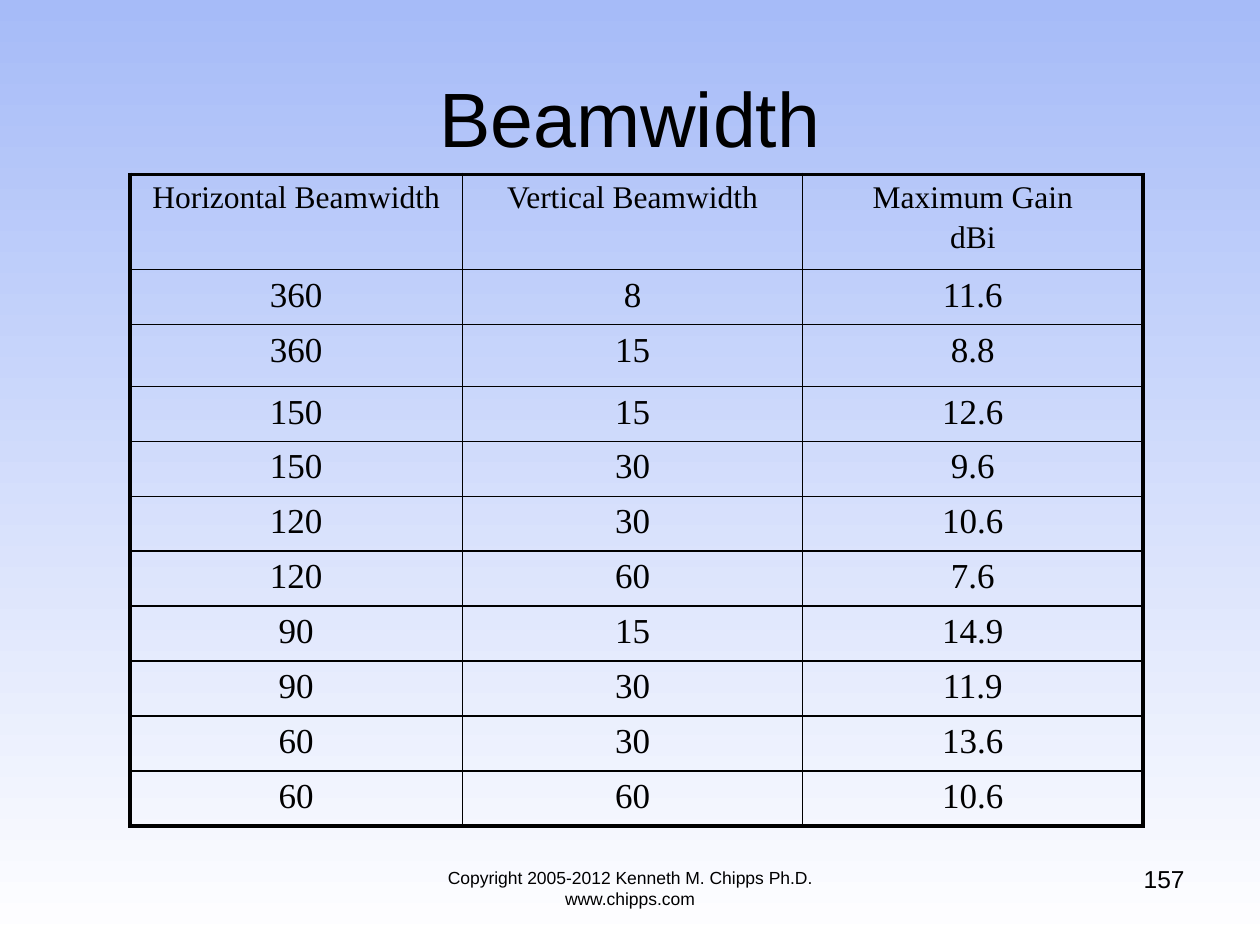
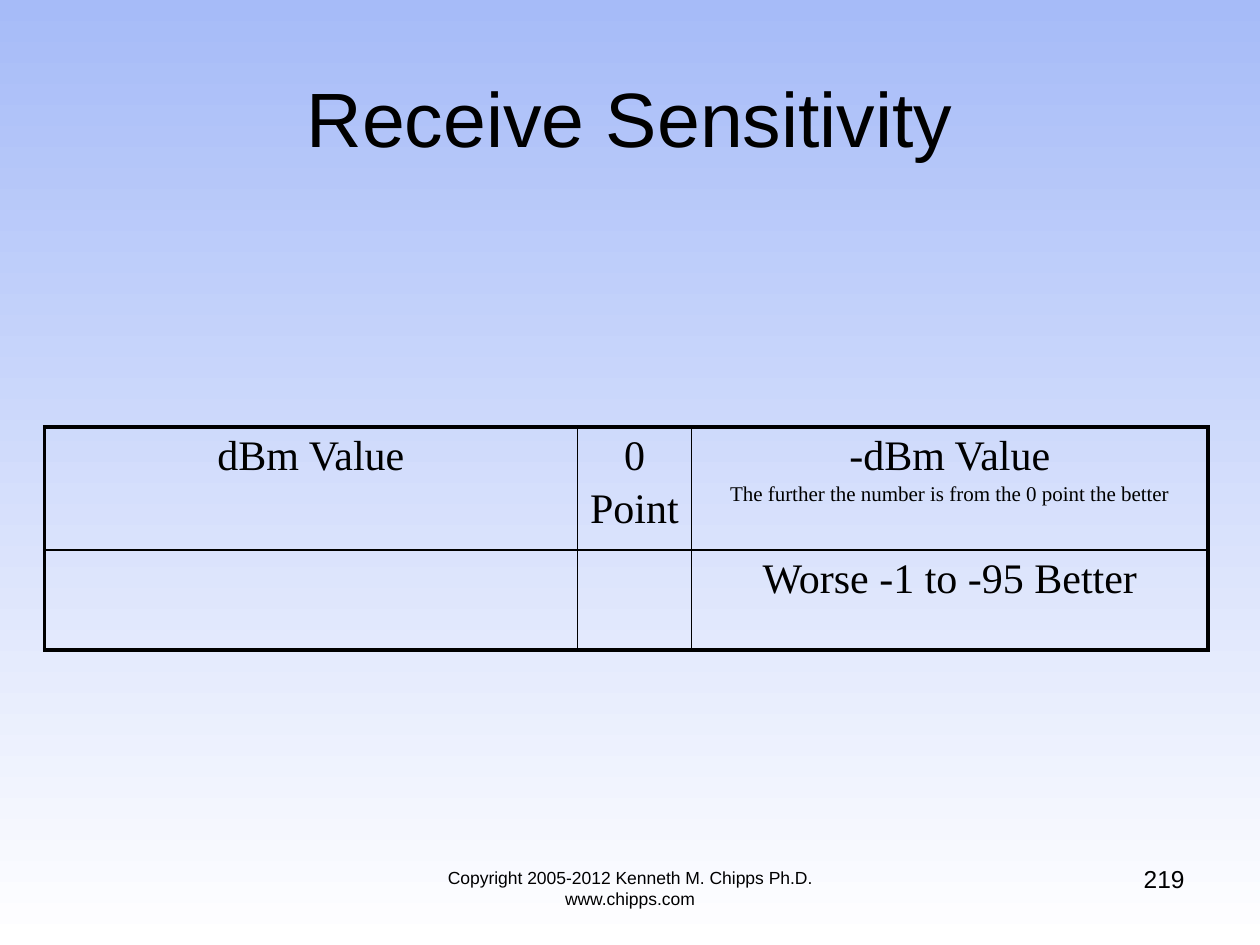
from dataclasses import dataclass
from typing import NamedTuple

from lxml import etree
from pptx import Presentation
from pptx.dml.color import RGBColor
from pptx.enum.text import MSO_ANCHOR, PP_ALIGN
from pptx.oxml.ns import qn
from pptx.util import Pt

CENTER, RIGHT = PP_ALIGN.CENTER, PP_ALIGN.RIGHT
TOP, MIDDLE = MSO_ANCHOR.TOP, MSO_ANCHOR.MIDDLE


@dataclass(frozen=True)
class Theme:
    ink: str = "000000"
    bg_top: str = "A6BBF8"
    bg_bottom: str = "FFFFFF"
    sans: str = "Arial"
    serif: str = "Times New Roman"
    title: float = 44
    large: float = 24
    body: float = 20
    header: float = 18
    number: float = 14
    note: float = 12
    footer: float = 10
    outer_line: float = 2.25
    inner_line: float = 1
    para_gap: float = 0.15  # share of the type size


T = Theme()
FOOTER = "Copyright 2005-2012 Kenneth M. Chipps Ph.D. www.chipps.com"


class Box(NamedTuple):
    left: float
    top: float
    width: float
    height: float


class Line(NamedTuple):
    text: str
    size: float


Cell = list[Line]


@dataclass(frozen=True)
class TableSpec:
    left: float
    top: float
    cols: list[float]
    rows: list[float]
    cells: list[list[Cell]]


@dataclass(frozen=True)
class SlideSpec:
    title: str
    number: str
    table: TableSpec


TITLE_BOX = Box(36, 21.6, 648, 90)
FOOTER_BOX = Box(216, 491.8, 288, 37.5)
NUMBER_BOX = Box(516, 490.3, 168, 37.5)


# Text
def add_run(p, text: str, size: float, font: str) -> None:
    r = p.add_run()
    r.text = text
    r.font.size = Pt(size)
    r.font.name = font
    r.font.color.rgb = RGBColor.from_string(T.ink)


def add_text(slide, box: Box, text: str, size: float, align=CENTER, anchor=TOP) -> None:
    tf = slide.shapes.add_textbox(*map(Pt, box)).text_frame
    tf.word_wrap = True
    tf.vertical_anchor = anchor
    p = tf.paragraphs[0]
    p.alignment = align
    add_run(p, text, size, T.sans)


# Tables
def add_border(cell, side: str, width: float) -> None:
    tc_pr = cell._tc.get_or_add_tcPr()
    ln = etree.SubElement(tc_pr, qn(f"a:ln{side}"), w=str(Pt(width)))
    fill = etree.SubElement(ln, qn("a:solidFill"))
    etree.SubElement(fill, qn("a:srgbClr"), val=T.ink)


def fill_cell(cell, lines: Cell) -> None:
    tf = cell.text_frame
    for i, line in enumerate(lines):
        p = tf.add_paragraph() if i else tf.paragraphs[0]
        p.alignment = CENTER
        if i:
            p.space_before = Pt(line.size * T.para_gap)
        add_run(p, line.text, line.size, T.serif)


def add_table(slide, spec: TableSpec) -> None:
    n_rows, n_cols = len(spec.rows), len(spec.cols)
    box = Box(spec.left, spec.top, sum(spec.cols), sum(spec.rows))
    table = slide.shapes.add_table(n_rows, n_cols, *map(Pt, box)).table
    table.first_row = table.horz_banding = False
    for col, width in zip(table.columns, spec.cols):
        col.width = Pt(width)
    for row, height in zip(table.rows, spec.rows):
        row.height = Pt(height)
    for i, row_cells in enumerate(spec.cells):
        for j, lines in enumerate(row_cells):
            cell = table.cell(i, j)
            on_edge = {"L": j == 0, "R": j == n_cols - 1,
                       "T": i == 0, "B": i == n_rows - 1}
            for side, outer in on_edge.items():
                add_border(cell, side, T.outer_line if outer else T.inner_line)
            cell.fill.background()
            fill_cell(cell, lines)


# Slide frame
def set_background(prs) -> None:
    fill = prs.slide_master.background.fill
    fill.gradient()
    fill.gradient_angle = 270
    for stop, color in zip(fill.gradient_stops, (T.bg_top, T.bg_bottom)):
        stop.color.rgb = RGBColor.from_string(color)


def add_slide(prs, spec: SlideSpec) -> None:
    slide = prs.slides.add_slide(prs.slide_layouts[6])
    add_text(slide, TITLE_BOX, spec.title, T.title, anchor=MIDDLE)
    add_table(slide, spec.table)
    add_text(slide, FOOTER_BOX, FOOTER, T.footer)
    add_text(slide, NUMBER_BOX, spec.number, T.number, align=RIGHT)


# Content
BEAMWIDTH_HEADER = [
    [Line("Horizontal Beamwidth", T.header)],
    [Line("Vertical Beamwidth", T.header)],
    [Line("Maximum Gain", T.header), Line("dBi", T.header)],
]
BEAMWIDTH_VALUES = [
    ("360", "8", "11.6"),
    ("360", "15", "8.8"),
    ("150", "15", "12.6"),
    ("150", "30", "9.6"),
    ("120", "30", "10.6"),
    ("120", "60", "7.6"),
    ("90", "15", "14.9"),
    ("90", "30", "11.9"),
    ("60", "30", "13.6"),
    ("60", "60", "10.6"),
]
SENSITIVITY_CELLS = [
    [
        [Line("dBm Value", T.large)],
        [Line("0", T.large), Line("Point", T.large)],
        [Line("-dBm Value", T.large),
         Line("The further the number is from the 0 point the better", T.note)],
    ],
    [[], [], [Line("Worse -1 to -95 Better", T.large)]],
]
SLIDES = [
    SlideSpec("Beamwidth", "157", TableSpec(
        left=74.3, top=99.6,
        cols=[190, 194.4, 194.4],
        rows=[54.5, 31.4, 35.4] + [31.4] * 8,
        cells=[BEAMWIDTH_HEADER]
        + [[[Line(v, T.body)] for v in row] for row in BEAMWIDTH_VALUES],
    )),
    SlideSpec("Receive Sensitivity", "219", TableSpec(
        left=25.4, top=244,
        cols=[304.6, 65.2, 295.2],
        rows=[70.4, 57],
        cells=SENSITIVITY_CELLS,
    )),
]


def main() -> None:
    prs = Presentation()
    prs.slide_width, prs.slide_height = Pt(720), Pt(540)
    set_background(prs)
    for spec in SLIDES:
        add_slide(prs, spec)
    prs.save("out.pptx")


if __name__ == "__main__":
    main()
